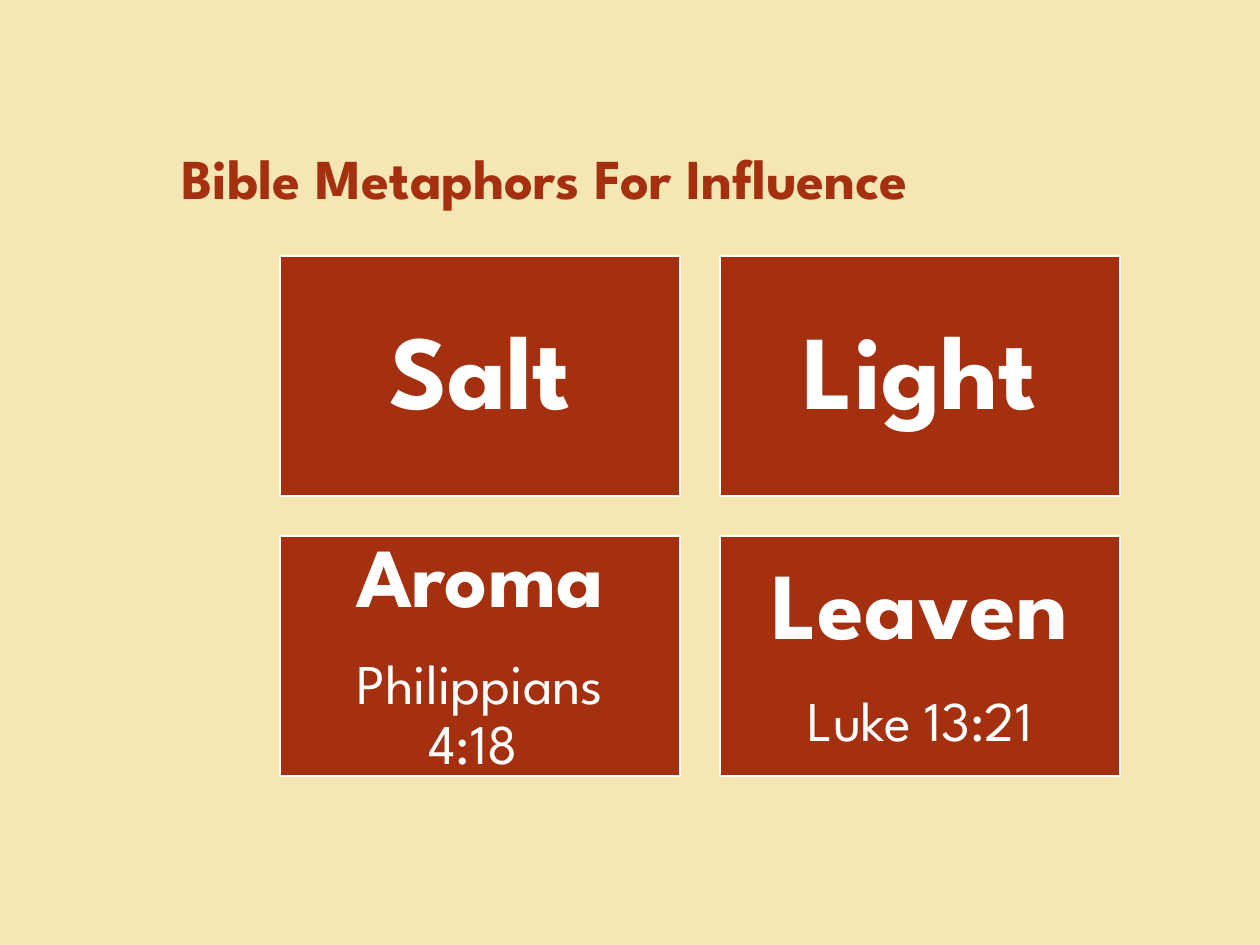
from dataclasses import dataclass

from pptx import Presentation
from pptx.dml.color import RGBColor
from pptx.enum.shapes import MSO_SHAPE
from pptx.enum.text import MSO_ANCHOR, PP_ALIGN
from pptx.util import Pt

PX = 914400 / 126


@dataclass(frozen=True)
class Theme:
    font: str = "League Spartan"
    paper: RGBColor = RGBColor.from_string("F5E7B4")
    brick: RGBColor = RGBColor.from_string("A5300F")
    white: RGBColor = RGBColor.from_string("FFFFFF")
    title: float = 32.2
    verse: int = 32


THEME = Theme()

# Word, its size in points, inset in px, verse
METAPHORS = [
    ("Salt", 60, 32, None),
    ("Light", 60, 32, None),
    ("Aroma", 48, 25, "Philippians 4:18 "),
    ("Leaven", 54, 29, "Luke 13:21"),
]


def px(*lengths):
    return [round(n * PX) for n in lengths]


def write(p, text, size, color, bold=False, align=None, line=None, after=None):
    p.alignment, p.line_spacing, p.space_after = align, line, after
    r = p.add_run()
    r.text = text
    r.font.name, r.font.size, r.font.bold = THEME.font, Pt(size), bold
    r.font.color.rgb = color


def add_title(s, box, text):
    tf = s.shapes.add_textbox(*px(*box)).text_frame
    tf.word_wrap = True
    tf.vertical_anchor = MSO_ANCHOR.MIDDLE
    write(tf.paragraphs[0], text, THEME.title, THEME.brick, bold=True)


def add_card(s, box, word, size, inset, verse):
    sp = s.shapes.add_shape(MSO_SHAPE.RECTANGLE, *px(*box))
    sp.shadow.inherit = False
    sp.fill.solid()
    sp.fill.fore_color.rgb = THEME.brick
    sp.line.color.rgb = THEME.white
    sp.line.width = Pt(1)
    tf = sp.text_frame
    tf.word_wrap = True
    tf.vertical_anchor = MSO_ANCHOR.MIDDLE
    tf.margin_left, tf.margin_top, tf.margin_right, tf.margin_bottom = px(*[inset] * 4)

    def add_line(p, text, size, bold):
        write(p, text, size, THEME.white, bold=bold, align=PP_ALIGN.CENTER,
              line=0.9, after=Pt(round(size * 0.35)))

    add_line(tf.paragraphs[0], word, size, True)
    if verse:
        add_line(tf.add_paragraph(), verse, THEME.verse, False)


def add_card_grid(s, box, cards, cols=2, gap=40):
    left, top, width, height = box
    rows = -(-len(cards) // cols)
    w = (width - gap * (cols - 1)) // cols
    h = (height - gap * (rows - 1)) // rows
    for i, card in enumerate(cards):
        row, col = divmod(i, cols)
        add_card(s, (left + col * (w + gap), top + row * (h + gap), w, h), *card)


def main():
    prs = Presentation()
    prs.slide_width, prs.slide_height = px(1260, 945)
    s = prs.slides.add_slide(prs.slide_layouts[6])
    s.background.fill.solid()
    s.background.fill.fore_color.rgb = THEME.paper
    add_title(s, (169, 118, 1062, 118), "Bible Metaphors For Influence")
    add_card_grid(s, (280, 256, 840, 520), METAPHORS)
    prs.save("out.pptx")


if __name__ == "__main__":
    main()
